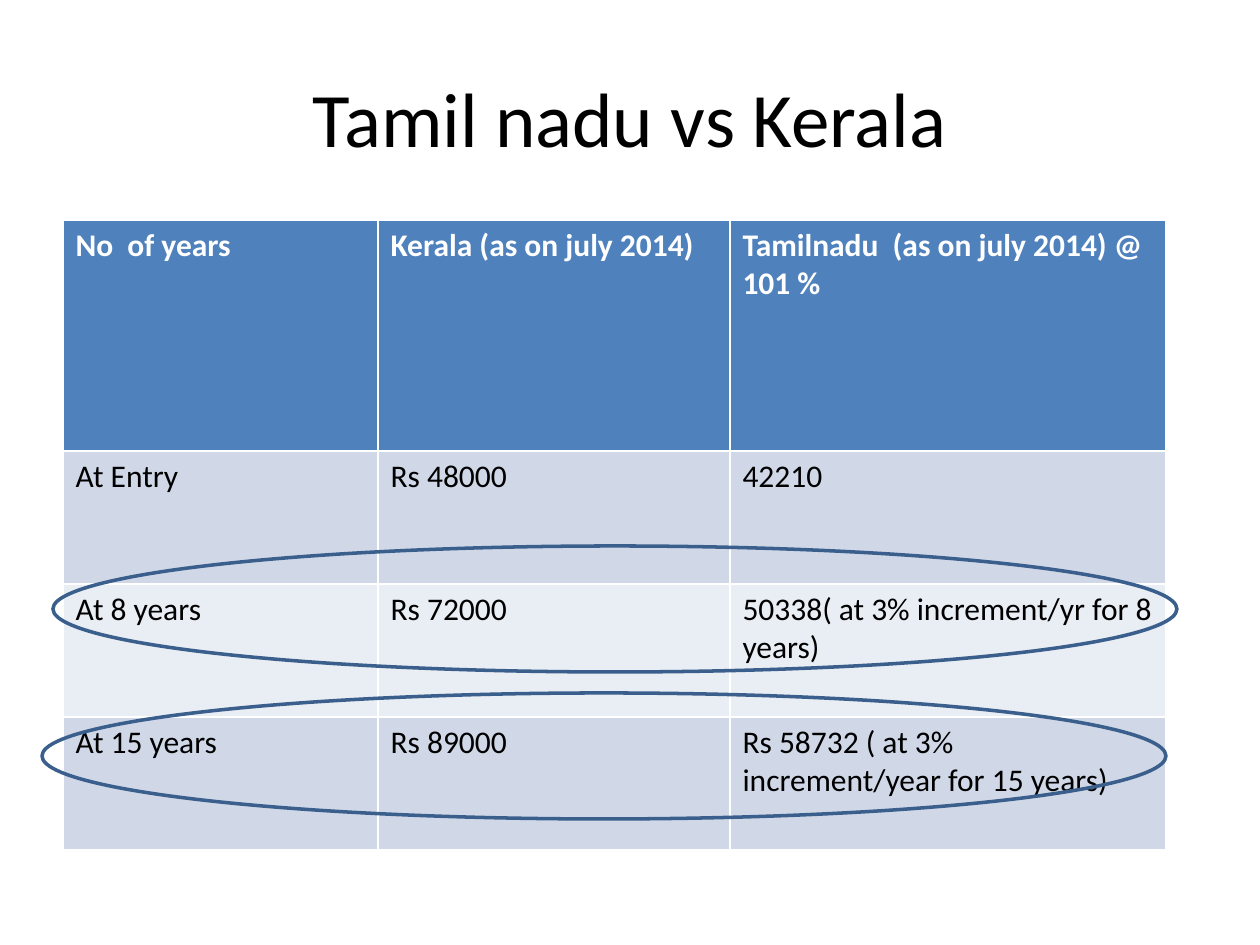
from pptx import Presentation
from pptx import util as u
from pptx.dml.color import RGBColor
from pptx.enum import shapes, text

# Content
TITLE = "Tamil nadu vs Kerala"
ROWS = [
    ("No  of years", "Kerala (as on july 2014)", "Tamilnadu  (as on july 2014) @ 101 %"),
    ("At Entry", "Rs 48000", "42210"),
    ("At 8 years", "Rs 72000", "50338( at 3% increment/yr for 8 years)"),
    ("At 15 years", "Rs 89000", "Rs 58732 ( at 3% increment/year for 15 years)"),
]

# Layout in px
COL_WIDTHS = [315, 352, 436]
ROW_HEIGHTS = [231, 133, 133, 133]
TITLE_BOX = (63, 38, 1134, 157)
TABLE_POS = (63, 220)
RING_SIZE = (1124, 126)
RING_POSITIONS = [(53, 546), (42, 693)]

FONT = "Calibri"
BLACK = RGBColor(0x00, 0x00, 0x00)
WHITE = RGBColor(0xFF, 0xFF, 0xFF)
HEADER = RGBColor(0x4F, 0x81, 0xBD)
BANDS = [RGBColor(0xE9, 0xED, 0xF4), RGBColor(0xD0, 0xD8, 0xE8)]
RING = RGBColor(0x3A, 0x5F, 0x8C)


def px(*values):
    return [u.Emu(round(v * 914400 / 126)) for v in values]


def style(p, size, color, bold=False):
    for r in p.runs:
        r.font.name = FONT
        r.font.size = u.Pt(size)
        r.font.bold = bold
        r.font.color.rgb = color


prs = Presentation()
prs.slide_width, prs.slide_height = px(1260, 945)
s = prs.slides.add_slide(prs.slide_layouts[6])

# Title
tf = s.shapes.add_textbox(*px(*TITLE_BOX)).text_frame
tf.word_wrap = True
tf.vertical_anchor = text.MSO_ANCHOR.MIDDLE
p = tf.paragraphs[0]
p.text = TITLE
p.alignment = text.PP_ALIGN.CENTER
style(p, 44, BLACK)

# Salary table; its default style draws the white borders
table = s.shapes.add_table(
    len(ROWS), len(COL_WIDTHS),
    *px(*TABLE_POS, sum(COL_WIDTHS), sum(ROW_HEIGHTS))).table
for column, width in zip(table.columns, px(*COL_WIDTHS)):
    column.width = width
for row, height in zip(table.rows, px(*ROW_HEIGHTS)):
    row.height = height
for i, values in enumerate(ROWS):
    is_header = i == 0
    for j, value in enumerate(values):
        cell = table.cell(i, j)
        cell.fill.solid()
        cell.fill.fore_color.rgb = HEADER if is_header else BANDS[i % 2]
        cell.text_frame.text = value
        style(cell.text_frame.paragraphs[0], 18,
              WHITE if is_header else BLACK, is_header)

# Rings around the last two rows
for position in RING_POSITIONS:
    sp = s.shapes.add_shape(shapes.MSO_SHAPE.OVAL, *px(*position, *RING_SIZE))
    sp.shadow.inherit = False
    sp.fill.background()
    sp.line.color.rgb = RING
    sp.line.width = u.Pt(2)

prs.save("out.pptx")
